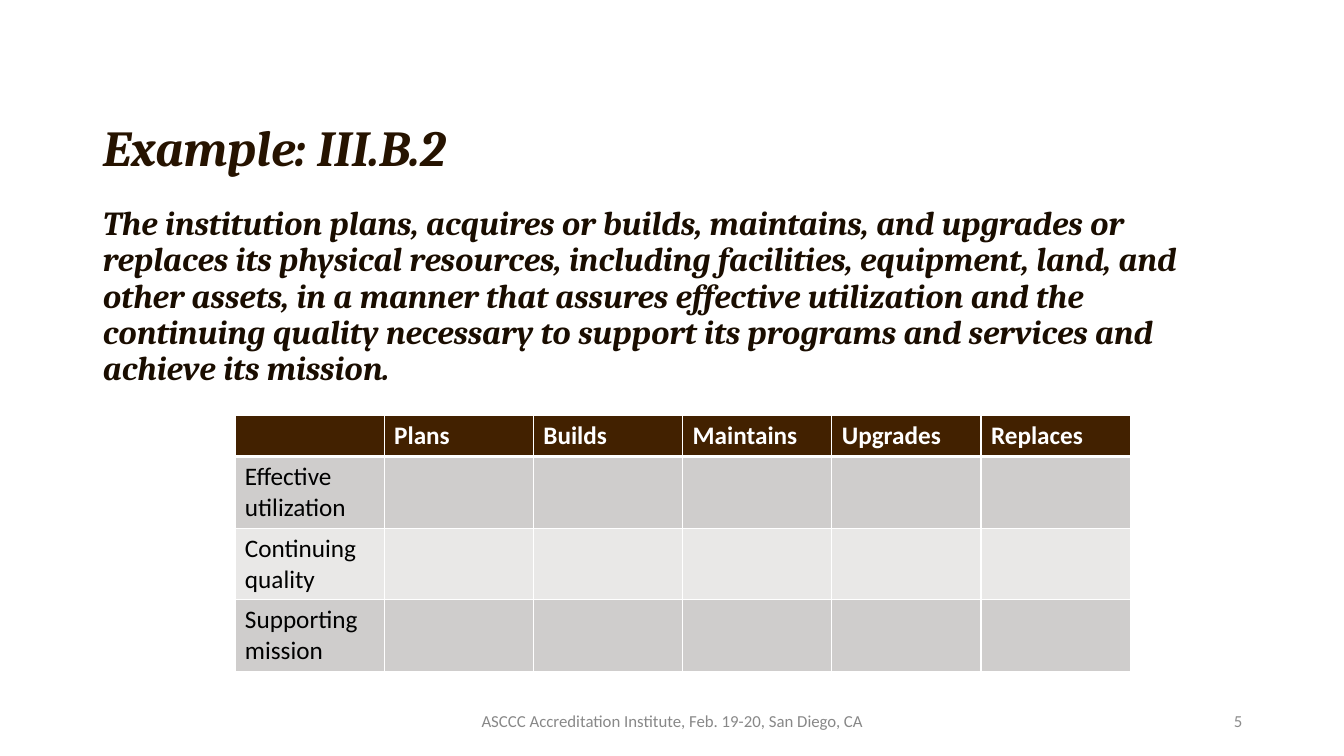
import pptx
import pptx.dml.color
import pptx.enum.text
import pptx.oxml
import pptx.oxml.ns
import pptx.util
from pptx.util import Inches

COLORS = {
    "title": "261300",
    "body": "1A0D00",
    "header": "422100",
    "dark_band": "CFCDCC",
    "light_band": "E9E8E7",
    "white": "FFFFFF",
    "black": "000000",
    "footer": "888888",
    "number": "8C8C8C",
}
ALIGN = pptx.enum.text.PP_ALIGN
ANCHOR = pptx.enum.text.MSO_ANCHOR


def add_run(paragraph, text, font_name, size, color, bold=False, italic=False):
    run = paragraph.add_run()
    run.text = text
    run.font.name = font_name
    run.font.size = pptx.util.Pt(size)
    run.font.bold = bold
    run.font.italic = italic
    run.font.color.rgb = pptx.dml.color.RGBColor.from_string(COLORS[color])


def add_border(cell, side, width):
    """Draw a white line, width in points, on side L, R, T or B of a cell."""
    cell._tc.get_or_add_tcPr().append(pptx.oxml.parse_xml(
        f'<a:ln{side} {pptx.oxml.ns.nsdecls("a")} w="{pptx.util.Pt(width)}">'
        f'<a:solidFill><a:srgbClr val="{COLORS["white"]}"/></a:solidFill></a:ln{side}>'))


presentation = pptx.Presentation()
presentation.slide_width = Inches(13.33)
presentation.slide_height = Inches(7.5)
slide = presentation.slides.add_slide(presentation.slide_layouts[1])

# Title and standard
title = slide.shapes.title
body = slide.placeholders[1]
statement = (
    "The institution plans, acquires or builds, maintains, and upgrades or replaces "
    "its physical resources, including facilities, equipment, land, and other assets, "
    "in a manner that assures effective utilization and the continuing quality necessary "
    "to support its programs and services and achieve its mission."
)
for placeholder, top, height, anchor, text, size, color in [
    (title, 0.99, 1, ANCHOR.MIDDLE, "Example: III.B.2", 36, "title"),
    (body, 2, 4.76, ANCHOR.TOP, statement, 24, "body"),
]:
    placeholder.left, placeholder.top = Inches(0.92), Inches(top)
    placeholder.width, placeholder.height = Inches(11.5), Inches(height)
    frame = placeholder.text_frame
    frame.word_wrap = True
    frame.auto_size = pptx.enum.text.MSO_AUTO_SIZE.NONE
    frame.vertical_anchor = anchor
    paragraph = frame.paragraphs[0]
    properties = paragraph._p.get_or_add_pPr()
    properties.set("marL", "0")
    properties.set("indent", "0")
    properties.append(pptx.oxml.parse_xml(f'<a:buNone {pptx.oxml.ns.nsdecls("a")}/>'))
    paragraph.alignment = ALIGN.LEFT
    paragraph.line_spacing = 0.9
    paragraph.space_before = pptx.util.Pt(0)
    add_run(paragraph, text, "Cambria", size, color, bold=True, italic=True)

# Evidence table
rows = [
    ["", "Plans", "Builds", "Maintains", "Upgrades", "Replaces"],
    ["Effective utilization"] + [""] * 5,
    ["Continuing quality"] + [""] * 5,
    ["Supporting mission"] + [""] * 5,
]
row_fills = ["header", "dark_band", "light_band", "dark_band"]
table = slide.shapes.add_table(
    len(rows), len(rows[0]), Inches(2.33), Inches(4.12), Inches(8.89), Inches(2.51)).table
for column in table.columns:
    column.width = Inches(1.48)
for row_index, (texts, fill) in enumerate(zip(rows, row_fills)):
    is_header = row_index == 0
    table.rows[row_index].height = Inches(0.41 if is_header else 0.7)
    for column_index, text in enumerate(texts):
        cell = table.cell(row_index, column_index)
        for side in "LRTB":
            thick = (is_header and side == "B") or (row_index == 1 and side == "T")
            add_border(cell, side, 3 if thick else 1)
        cell.fill.solid()
        cell.fill.fore_color.rgb = pptx.dml.color.RGBColor.from_string(COLORS[fill])
        if text:
            add_run(cell.text_frame.paragraphs[0], text, "Calibri", 18,
                    "white" if is_header else "black", bold=is_header)

# Footer and slide number
for left, width, alignment, text, color in [
    (4.42, 4.5, ALIGN.CENTER, "ASCCC Accreditation Institute, Feb. 19-20, San Diego, CA", "footer"),
    (9.42, 3, ALIGN.RIGHT, "5", "number"),
]:
    text_box = slide.shapes.add_textbox(Inches(left), Inches(6.95), Inches(width), Inches(0.4))
    text_box.text_frame.word_wrap = True
    text_box.text_frame.vertical_anchor = ANCHOR.MIDDLE
    paragraph = text_box.text_frame.paragraphs[0]
    paragraph.alignment = alignment
    add_run(paragraph, text, "Calibri", 12, color)

presentation.save("out.pptx")
